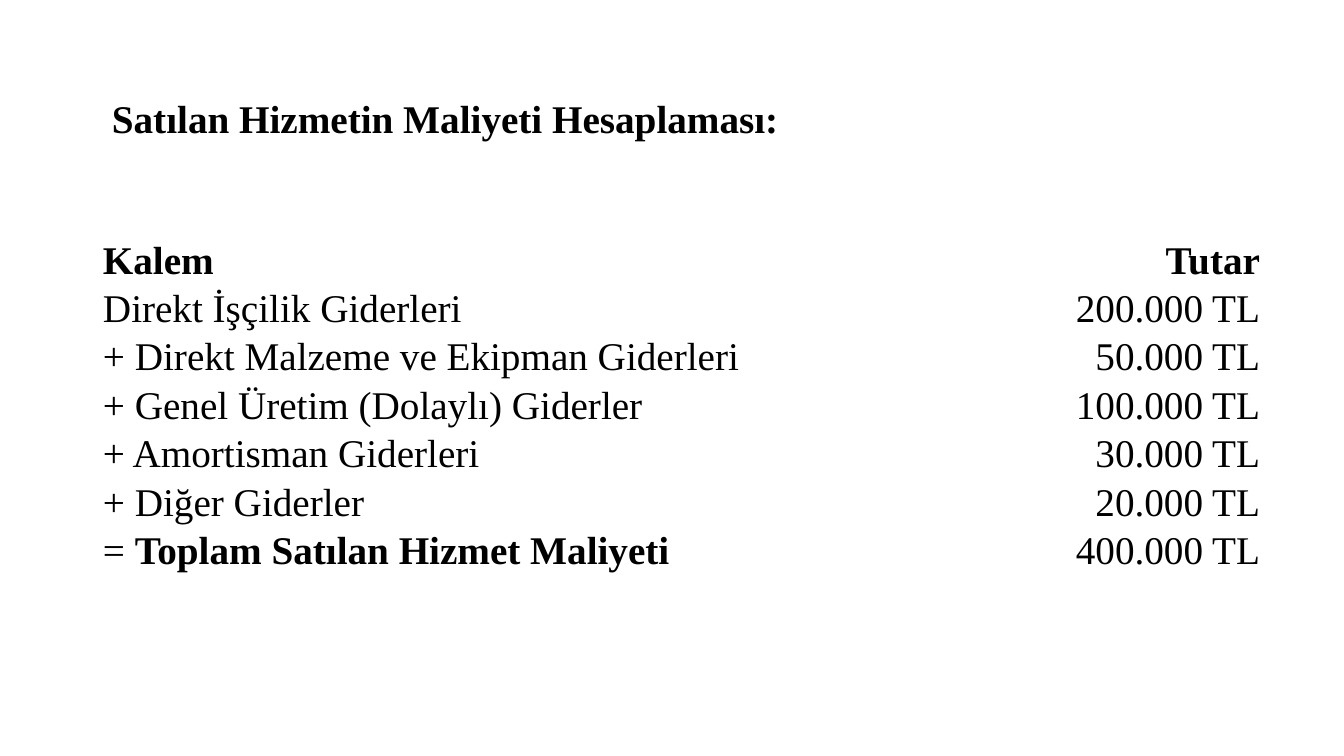
from pptx import Presentation
from pptx.dml.color import RGBColor
from pptx.enum.text import MSO_ANCHOR, MSO_AUTO_SIZE, PP_ALIGN
from pptx.util import Emu, Pt

THEME = {
    "background": RGBColor(0xFF, 0xFF, 0xFF),
    "text": RGBColor(0, 0, 0),
    "font": "Times New Roman",
    "size": Pt(28),
}
CELL_FORMAT = {
    "margin_left": 1,
    "margin_right": 1,
    "margin_top": 1,
    "margin_bottom": 1,
}
COST_ROWS = [
    ([("Kalem", True)], [("Tutar", True)]),
    ([("Direkt İşçilik Giderleri", False)], [("200.000 TL", False)]),
    ([("+ Direkt Malzeme ve Ekipman Giderleri", False)], [("50.000 TL", False)]),
    ([("+ Genel Üretim (Dolaylı) Giderler", False)], [("100.000 TL", False)]),
    ([("+ Amortisman Giderleri", False)], [("30.000 TL", False)]),
    ([("+ Diğer Giderler", False)], [("20.000 TL", False)]),
    (
        [("= ", False), ("Toplam Satılan Hizmet Maliyeti", True)],
        [("400.000 TL", False)],
    ),
]
COLUMN_WIDTHS = [931, 228]
ALIGNMENTS = [PP_ALIGN.JUSTIFY, PP_ALIGN.RIGHT]
ROW_HEIGHT = 48
LEFT = 102


def px(length):
    return Emu(round(length * 914400 / 100.8))


def write(paragraph, parts):
    for text, bold in parts:
        part = paragraph.add_run()
        part.text = text
        font_format = {"name": THEME["font"], "size": THEME["size"], "bold": bold}
        for attribute, value in font_format.items():
            setattr(part.font, attribute, value)
        part.font.color.rgb = THEME["text"]


presentation = Presentation()
presentation.slide_width = px(1344)
presentation.slide_height = px(756)
slide = presentation.slides.add_slide(presentation.slide_layouts[6])
slide.background.fill.solid()
slide.background.fill.fore_color.rgb = THEME["background"]

costs = slide.shapes.add_table(
    len(COST_ROWS),
    len(COLUMN_WIDTHS),
    px(LEFT),
    px(235),
    px(sum(COLUMN_WIDTHS)),
    px(ROW_HEIGHT * len(COST_ROWS)),
).table
for flag in ("first_row", "horz_banding"):
    setattr(costs, flag, False)
for column, width in zip(costs.columns, COLUMN_WIDTHS):
    column.width = px(width)

for row, entries in zip(costs.rows, COST_ROWS):
    row.height = px(ROW_HEIGHT)
    for cell, parts, alignment in zip(row.cells, entries, ALIGNMENTS):
        for attribute, value in CELL_FORMAT.items():
            setattr(cell, attribute, px(value))
        cell.vertical_anchor = MSO_ANCHOR.MIDDLE
        cell.fill.background()
        paragraph = cell.text_frame.paragraphs[0]
        paragraph.alignment = alignment
        paragraph.line_spacing = 1.07
        write(paragraph, parts)

heading = slide.shapes.add_textbox(px(LEFT), px(89), px(1092), px(57)).text_frame
heading.word_wrap = True
heading.auto_size = MSO_AUTO_SIZE.SHAPE_TO_FIT_TEXT
write(heading.paragraphs[0], [("Satılan Hizmetin Maliyeti Hesaplaması:", True)])

presentation.save("out.pptx")
